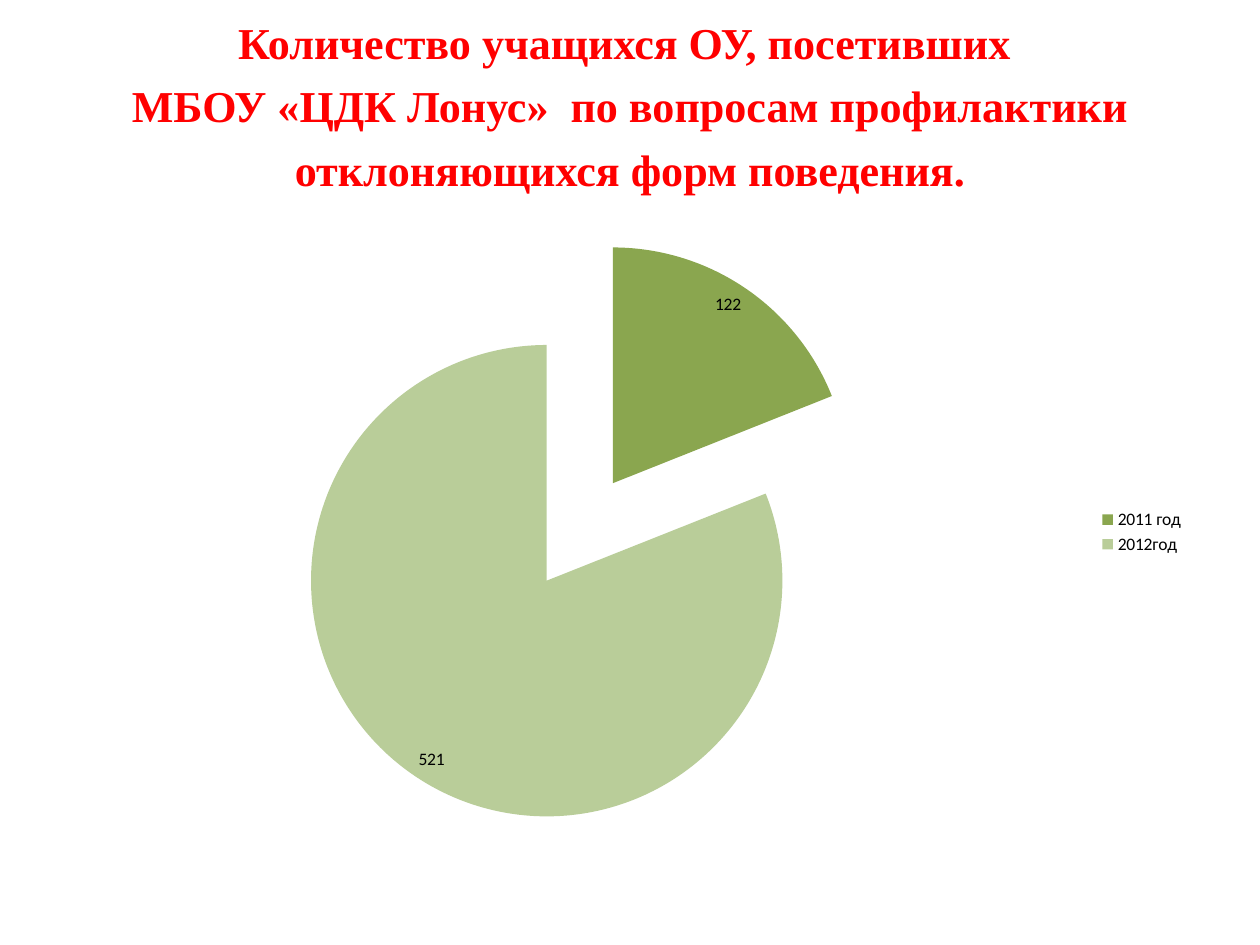
from typing import NamedTuple

import lxml.etree
import pptx
import pptx.chart.data
import pptx.dml.color
import pptx.enum.chart
import pptx.enum.text
import pptx.oxml.ns
import pptx.util

PX = 914400 // 126
RED = pptx.dml.color.RGBColor(0xFF, 0x00, 0x00)
BLACK = pptx.dml.color.RGBColor(0x00, 0x00, 0x00)
GREEN = pptx.dml.color.RGBColor(0x8A, 0xA6, 0x4F)
PALE = pptx.dml.color.RGBColor(0xB9, 0xCD, 0x99)
EXPLODE = 25


class Box(NamedTuple):
    left: int
    top: int
    width: int
    height: int

    def emu(self) -> list[int]:
        return [side * PX for side in self]


class Slice(NamedTuple):
    year: str
    count: int
    color: pptx.dml.color.RGBColor


HEAD = Box(63, 38, 1134, 176)
PIE = Box(63, 220, 1134, 624)
LINES = (
    "Количество учащихся ОУ, посетивших ",
    "МБОУ «ЦДК Лонус»  по вопросам профилактики отклоняющихся форм поведения.",
)
SLICES = (Slice("2011 год", 122, GREEN), Slice("2012год", 521, PALE))


def add_head(slide, box: Box, lines: tuple[str, ...]) -> None:
    frame = slide.shapes.add_textbox(*box.emu()).text_frame
    frame.word_wrap = True
    frame.vertical_anchor = pptx.enum.text.MSO_ANCHOR.MIDDLE
    frame.margin_top = 0
    frame.margin_bottom = 52 * PX
    para = frame.paragraphs[0]
    para.alignment = pptx.enum.text.PP_ALIGN.CENTER
    para.line_spacing = 1.2
    for index, line in enumerate(lines):
        if index:
            para.add_line_break()
        run = para.add_run()
        run.text = line
        run.font.name = "Times New Roman"
        run.font.size = pptx.util.Pt(25.2)
        run.font.bold = True
        run.font.color.rgb = RED


def explode(series, share: int) -> None:
    """Pull every slice out from the centre by a share of the radius."""
    node = lxml.etree.Element(pptx.oxml.ns.qn("c:explosion"), val=str(share))
    series._element.find(pptx.oxml.ns.qn("c:tx")).addnext(node)


def add_pie(slide, box: Box, slices: tuple[Slice, ...]) -> None:
    data = pptx.chart.data.CategoryChartData()
    data.categories = [part.year for part in slices]
    data.add_series("Series 1", [part.count for part in slices])
    kind = pptx.enum.chart.XL_CHART_TYPE.PIE
    chart = slide.shapes.add_chart(kind, *box.emu(), data).chart

    chart.has_title = False
    chart.font.name = "Calibri"
    chart.font.size = pptx.util.Pt(10)
    chart.font.color.rgb = BLACK
    chart.has_legend = True
    chart.legend.position = pptx.enum.chart.XL_LEGEND_POSITION.RIGHT
    chart.legend.include_in_layout = False

    plot = chart.plots[0]
    plot.vary_by_categories = True
    plot.has_data_labels = True
    plot.data_labels.show_value = True
    plot.data_labels.show_percentage = False
    plot.data_labels.position = pptx.enum.chart.XL_LABEL_POSITION.INSIDE_END

    series = plot.series[0]
    explode(series, EXPLODE)
    for index, part in enumerate(slices):
        look = series.points[index].format
        look.fill.solid()
        look.fill.fore_color.rgb = part.color
        look.line.fill.background()


def main() -> None:
    deck = pptx.Presentation()
    deck.slide_width = 1260 * PX
    deck.slide_height = 945 * PX
    slide = deck.slides.add_slide(deck.slide_layouts[6])
    add_head(slide, HEAD, LINES)
    add_pie(slide, PIE, SLICES)
    deck.save("out.pptx")


if __name__ == "__main__":
    main()
